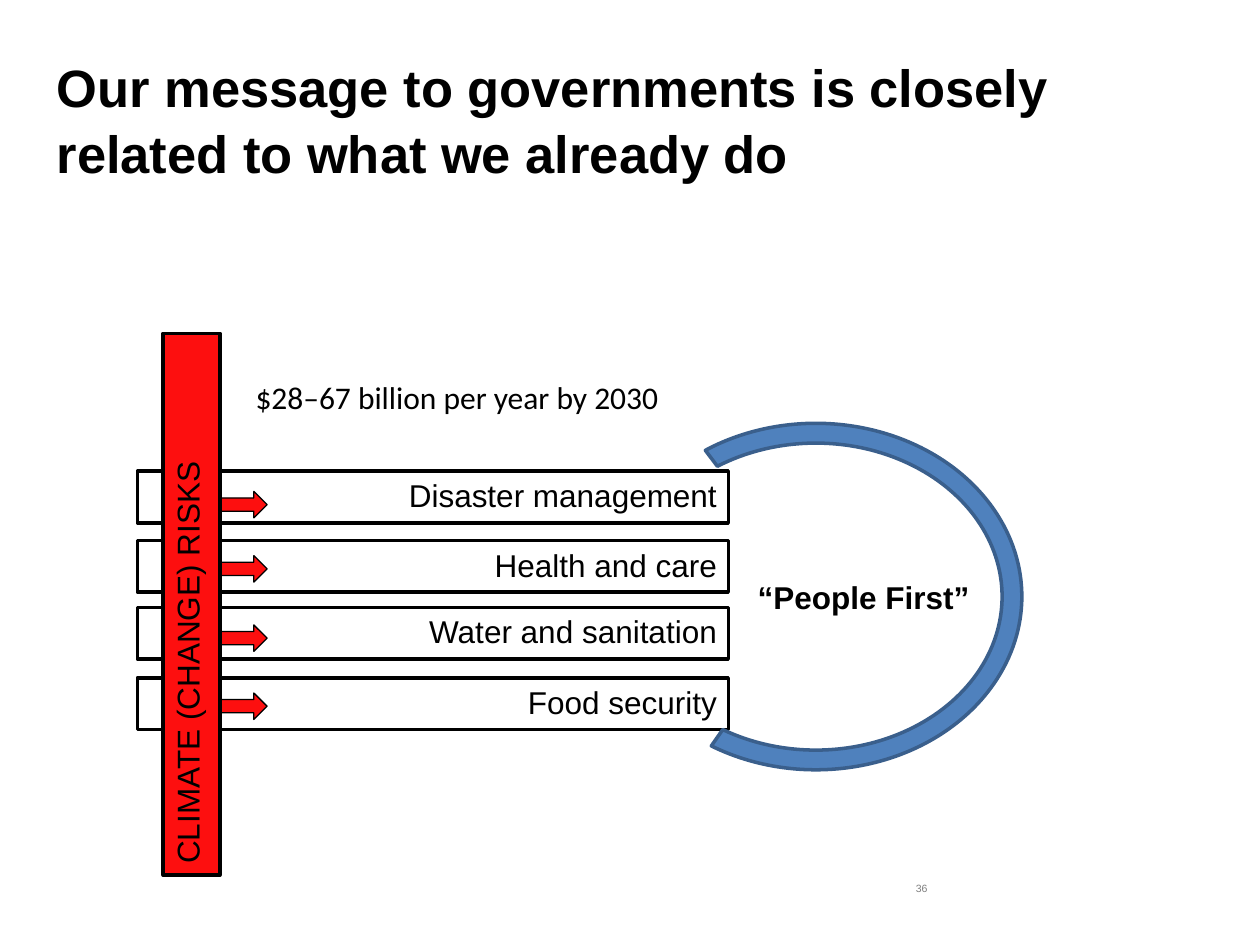
from pptx import Presentation
from pptx.dml.color import RGBColor
from pptx.enum import shapes, text
from pptx.util import Inches, Pt

BLACK = RGBColor(0, 0, 0)
WHITE = RGBColor(255, 255, 255)
RED = RGBColor(0xFD, 0x0F, 0x0F)
BLUE = RGBColor(0x4F, 0x81, 0xBD)
NAVY = RGBColor(0x3A, 0x5F, 0x8C)
GRAY = RGBColor(0x7F, 0x7F, 0x7F)
KIND = shapes.MSO_SHAPE
ALIGN = text.PP_ALIGN
ANCHOR = text.MSO_ANCHOR
ROWS = (
    ("Disaster management", 0, 0.16),
    ("Health and care", 0.55, 0.67),
    ("Water and sanitation", 1.08, 1.22),
    ("Food security", 1.64, 1.76),
)


def write(shape, words, align=ALIGN.LEFT, anchor=ANCHOR.TOP, wrap=True, **look):
    """Put one formatted paragraph into a shape."""
    frame = shape.text_frame
    frame.word_wrap = wrap
    frame.vertical_anchor = anchor
    frame.text = words
    par = frame.paragraphs[0]
    par.alignment = align
    par.font.color.rgb = look.pop("color", BLACK)
    for name, value in {"name": "Arial", "size": Pt(18), **look}.items():
        setattr(par.font, name, value)
    return par


def draw(tree, kind, box, fill, line=BLACK, width=2):
    """Add a filled and outlined preset shape."""
    shape = tree.add_shape(kind, *map(Inches, box))
    shape.shadow.inherit = False
    shape.fill.solid()
    shape.fill.fore_color.rgb = fill
    shape.line.color.rgb = line
    shape.line.width = Pt(width)
    return shape


def pad(shape):
    """Set the narrow margins of the bars."""
    sides = {"left": 0.09, "top": 0.04, "right": 0.09, "bottom": 0.04}
    for side, gap in sides.items():
        setattr(shape.text_frame, f"margin_{side}", Inches(gap))


def head(slide, box):
    """Place the slide title."""
    title = slide.shapes.title
    for name, value in zip(("left", "top", "width", "height"), box):
        setattr(title, name, Inches(value))
    par = write(title, "Our message to governments is closely related to what we already do",
                size=Pt(30), bold=True)
    par.line_spacing = 1.05


def label(slide, box, words, **look):
    """Place a free line of text."""
    write(slide.shapes.add_textbox(*map(Inches, box)), words, **look)


def risks(slide, box):
    """Draw the sector bars crossed by the upright risk bar."""
    left, top, width, height = box
    tree = slide.shapes.add_group_shape().shapes
    mid = top + height / 2
    for words, drop, _ in ROWS:
        bar = draw(tree, KIND.RECTANGLE, (left, top + 1.1 + drop, width, 0.41), WHITE)
        pad(bar)
        write(bar, words, ALIGN.RIGHT)
    for _, _, drop in ROWS:
        draw(tree, KIND.RIGHT_ARROW, (left + 0.66, top + 1.1 + drop, 0.37, 0.21), RED, width=0.75)
    bar = draw(tree, KIND.RECTANGLE,
               (left + 0.43 - height / 2, mid - 0.22, height, 0.45), RED)
    bar.rotation = 270
    pad(bar)
    write(bar, "CLIMATE (CHANGE) RISKS")


def people(slide, box):
    """Draw the arc that embraces the bars."""
    arc = draw(slide.shapes, KIND.BLOCK_ARC, box, BLUE, NAVY)
    for index, value in enumerate((139.76, 74.99, 0.057)):
        arc.adjustments[index] = value
    write(arc, "“People First”", ALIGN.CENTER, ANCHOR.MIDDLE, bold=True)


def main():
    """Build and save the slide."""
    deck = Presentation()
    deck.slide_width, deck.slide_height = Inches(10), Inches(7.5)
    slide = deck.slides.add_slide(deck.slide_layouts[5])
    label(slide, (7.17, 6.95, 2.33, 0.4), "36", size=Pt(6), color=GRAY)
    head(slide, (0.35, 0.36, 8.12, 1.11))
    risks(slide, (1.09, 2.64, 4.69, 4.3))
    label(slide, (1.93, 2.95, 3.86, 0.4), "$28–67 billion per year by 2030",
          name="Calibri", wrap=False)
    people(slide, (4.84, 3.36, 3.27, 2.75))
    deck.save("out.pptx")


if __name__ == "__main__":
    main()
